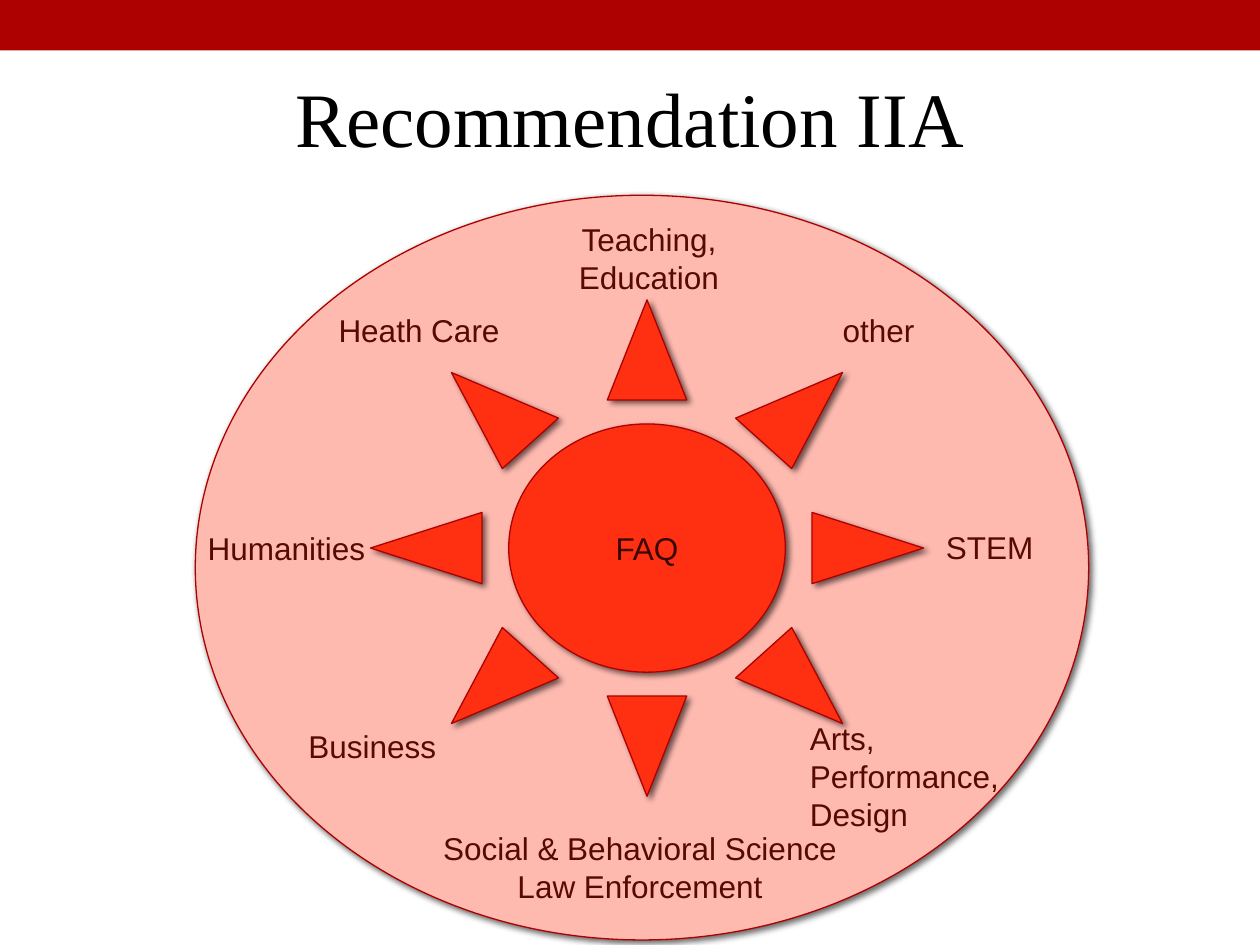
"""Build the Recommendation IIA slide: a sun of subject areas around the FAQ."""
from lxml import etree
from pptx import Presentation, util as u
from pptx.dml.color import RGBColor
from pptx.enum import shapes, text
from pptx.oxml import ns

COLORS = {"bar": "AD0101", "field": "FFBAB0", "sun": "FF2F12", "title": "000000",
          "label": "560A00", "core": "3A0700", "shadow": "000000"}
LEFT, CENTER = text.PP_ALIGN.LEFT, text.PP_ALIGN.CENTER
TOP, MIDDLE = text.MSO_ANCHOR.TOP, text.MSO_ANCHOR.MIDDLE

deck = Presentation()
deck.slide_width, deck.slide_height = u.Inches(10), u.Inches(7.5)
COLUMN, ROW = deck.slide_width / 100, deck.slide_height / 75
page = deck.slides.add_slide(deck.slide_layouts[5])


def grid(left, top, width, height):
    return [round(n * unit) for n, unit in zip((left, top, width, height), (COLUMN, ROW) * 2)]


def write(shape, lines, color, align=LEFT, anchor=TOP, size=18, font="Arial"):
    frame = shape.text_frame
    frame.text = "\n".join(lines)
    frame.vertical_anchor = anchor
    for para in frame.paragraphs:
        para.alignment = align
        for span in para.runs:
            for name, value in {"size": u.Pt(size), "name": font}.items():
                setattr(span.font, name, value)
            span.font.color.rgb = RGBColor.from_string(COLORS[color])


bar = page.shapes.add_shape(shapes.MSO_SHAPE.RECTANGLE, *grid(0, 0, 100, 4))
bar.shadow.inherit = False
bar.fill.solid()
bar.fill.fore_color.rgb = RGBColor.from_string(COLORS["bar"])
bar.line.fill.background()

title = page.shapes.title
for name, value in zip(("left", "top", "width", "height"), grid(5, 3, 90, 12.5)):
    setattr(title, name, value)
write(title, ["Recommendation IIA"], "title", CENTER, MIDDLE, 44, "Times New Roman")

figures = [
    (shapes.MSO_SHAPE.OVAL, (15.5, 15.5, 70.9, 59.1), "field",
     "Heath Care\t\t\tother", "label", LEFT, TOP),
    (shapes.MSO_SHAPE.SUN, (29.4, 23.8, 43.9, 39.4), "sun", "FAQ", "core", CENTER, MIDDLE),
]
for kind, place, fill, words, color, align, anchor in figures:
    figure = page.shapes.add_shape(kind, *grid(*place))
    figure.fill.solid()
    figure.fill.fore_color.rgb = RGBColor.from_string(COLORS[fill])
    figure.line.color.rgb = RGBColor.from_string(COLORS["bar"])
    figure.line.width = u.Pt(0.75)
    figure.shadow.inherit = False
    effects = figure.element.spPr.find(ns.qn("a:effectLst"))
    shadow = etree.SubElement(effects, ns.qn("a:outerShdw"), blurRad=str(u.Pt(3)),
                              dist=str(u.Pt(2)), dir=str(45 * 60000), rotWithShape="0")
    tint = etree.SubElement(shadow, ns.qn("a:srgbClr"), val=COLORS["shadow"])
    etree.SubElement(tint, ns.qn("a:alpha"), val="60000")
    write(figure, [words], color, align, anchor)
    layout = figure.element.find(".//" + ns.qn("a:pPr"))
    tabs = etree.SubElement(layout, ns.qn("a:tabLst"))
    for stop in (20, 30, 40):
        etree.SubElement(tabs, ns.qn("a:tab"), pos=str(round(stop * COLUMN)), algn="l")

labels = [
    ((44.9, 17, 13.2, 7.1), ["Teaching,", "Education"], CENTER, False),
    ((34, 65.3, 33.6, 10.1), ["Social & Behavioral Science", "Law Enforcement"], CENTER, False),
    ((23.5, 57.2, 12.3, 4), ["Business"], LEFT, False),
    ((74.1, 41.4, 9, 4), ["STEM"], LEFT, False),
    ((63.3, 56.6, 17.5, 10.1), ["Arts, Performance, Design"], LEFT, True),
    ((15.5, 41.5, 14.6, 4), ["Humanities"], LEFT, False),
]
for place, lines, align, wrap in labels:
    box = page.shapes.add_textbox(*grid(*place))
    for name, value in {"word_wrap": wrap,
                        "auto_size": text.MSO_AUTO_SIZE.SHAPE_TO_FIT_TEXT}.items():
        setattr(box.text_frame, name, value)
    write(box, lines, "label", align)

deck.save("out.pptx")
